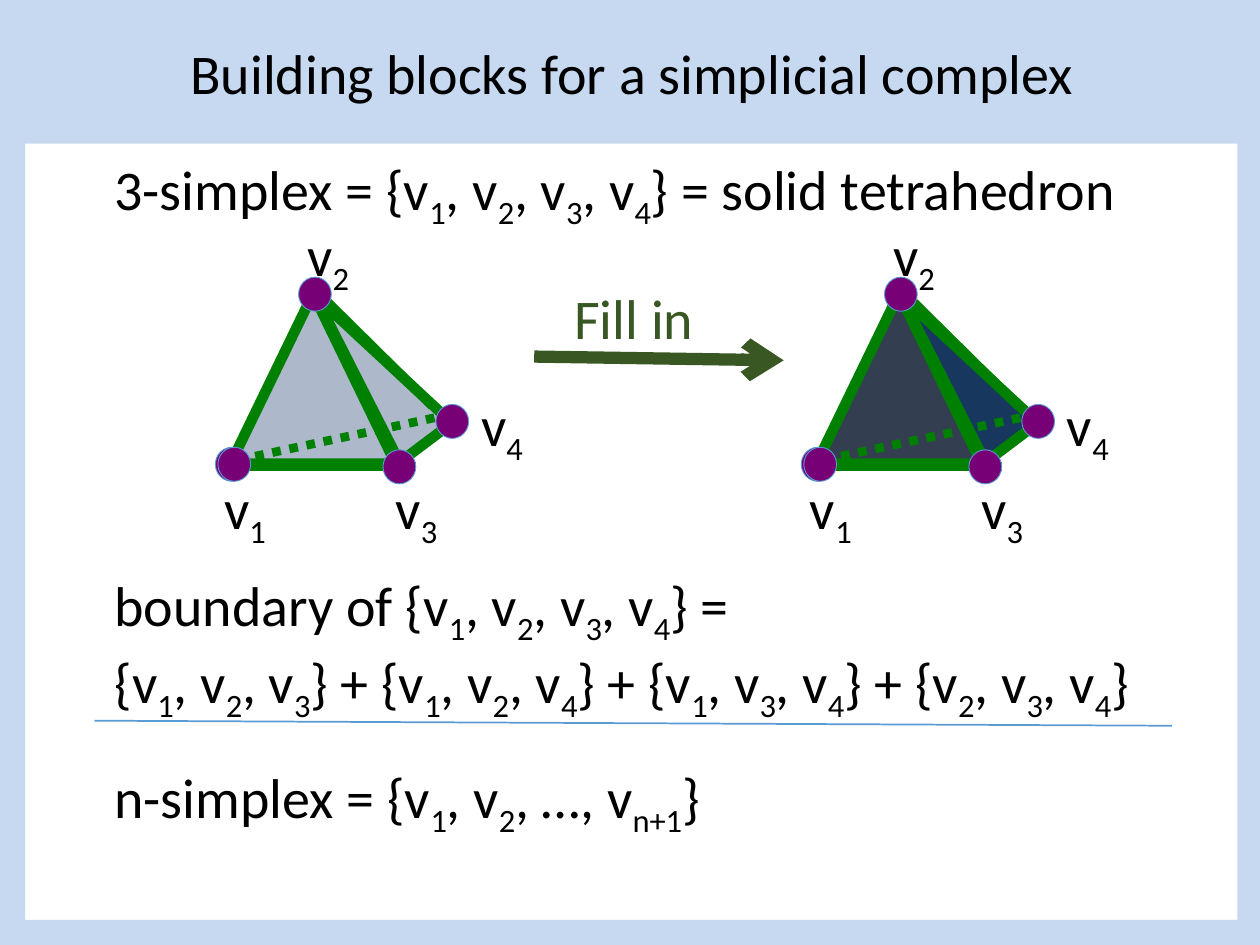
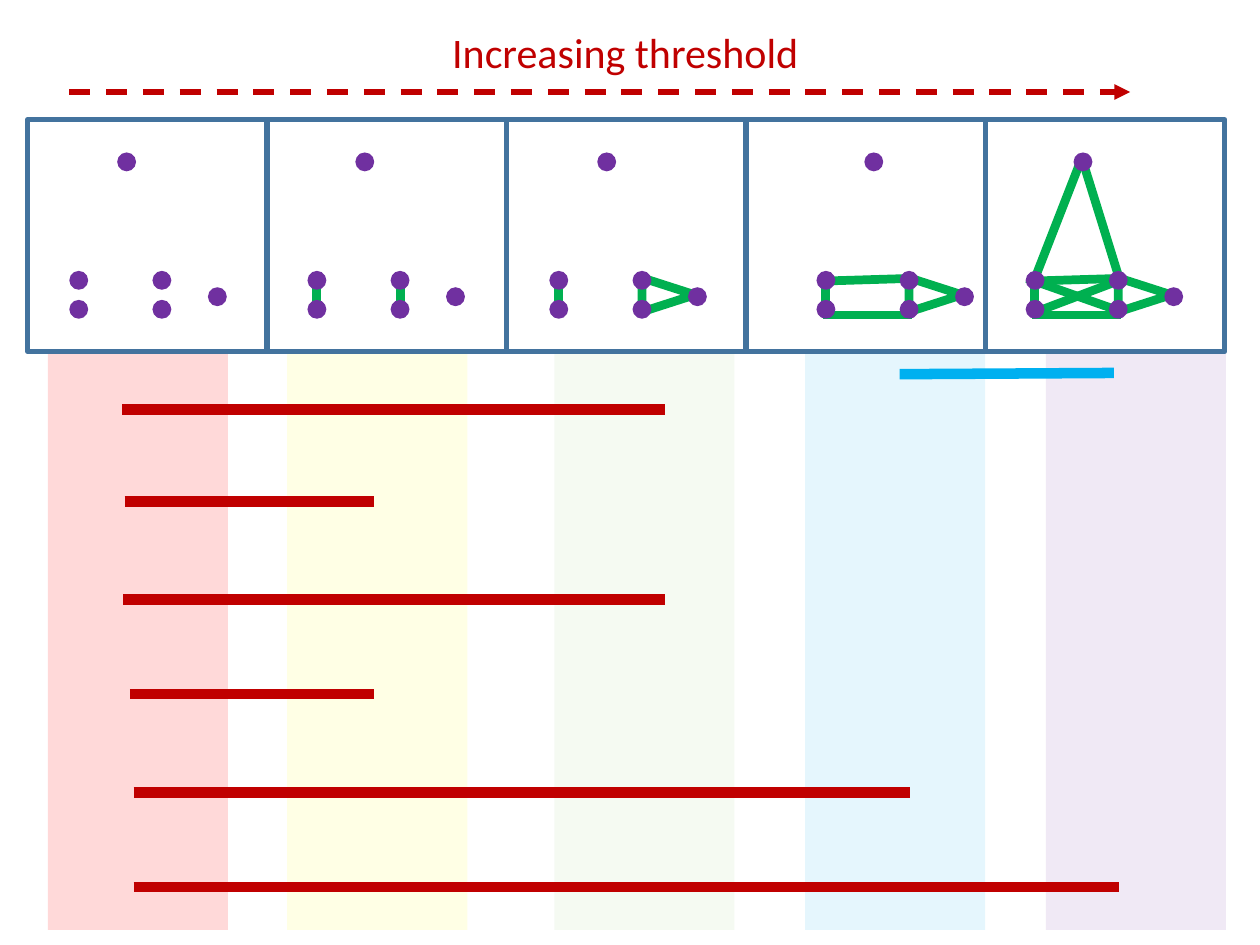
from dataclasses import dataclass
from pptx import Presentation
from pptx.dml.color import RGBColor
from pptx.enum.dml import MSO_LINE as DASH
from pptx.enum.shapes import MSO_CONNECTOR, MSO_SHAPE as SHAPE
from pptx.enum.text import MSO_ANCHOR, MSO_AUTO_SIZE, PP_ALIGN
from pptx.oxml.ns import qn
from pptx.util import Inches, Pt
from lxml import etree


@dataclass(frozen=True)
class Theme:
    """Colours and type sizes of the deck."""
    font: str = "Calibri"
    big: int = 32
    small: int = 24
    ink: str = "000000"
    white: str = "FFFFFF"
    band: str = "C6D9F1"
    edge: str = "008000"
    vertex: str = "770077"
    thin: str = "5B9BD5"
    hollow: tuple = ("ADB9CA", "ADB9CA")
    solid: tuple = ("333F50", "17375E")
    fill_in: str = "385723"
    red: str = "C00000"
    blue: str = "00B0F0"
    green: str = "00B050"
    purple: str = "7030A0"
    frame: str = "43739E"


T = Theme()

BANDS = [(0.38, "FF0000", 15), (2.28, "FFFF00", 10), (4.4, "E2F0D9", 32),
         (6.39, T.blue, 10), (8.3, T.purple, 10)]
BARS = [(0.97, 5.28, 3.25), (0.99, 2.97, 3.98), (0.98, 5.28, 4.76),
        (1.03, 2.97, 5.51), (1.06, 7.22, 6.29), (1.06, 8.88, 7.04)]
DOTS = [(0.38, 1.21), (0.66, 2.15), (0.66, 2.38), (0, 2.15), (0, 2.38), (1.1, 2.28)]

LEFT = (0.07, 2.23, 0.07, 2.47)
RIGHT = (0.74, 2.21, 0.74, 2.43)
TOP = (0.74, 2.21, 0.08, 2.23)
BOTTOM = (0.05, 2.5, 0.76, 2.5)
DIAGONALS = [(0.07, 2.48, 0.68, 2.25), (0.01, 2.21, 0.75, 2.47)]
PEAK = [(0.44, 1.27, 0.05, 2.27), (0.46, 1.3, 0.74, 2.2)]
STAGES = [(0.55, [], False),
          (2.44, [LEFT, RIGHT], False),
          (4.36, [LEFT], True),
          (6.48, [LEFT, TOP, BOTTOM], True),
          (8.14, [LEFT, TOP, BOTTOM, *DIAGONALS, *PEAK], True)]


def rgb(code):
    """Turn a hex code into a colour."""
    return RGBColor.from_string(code)


def add_runs(p, text, size, color):
    """Add runs to a paragraph; parts between underscores are subscripts."""
    for i, part in enumerate(text.split("_")):
        if not part:
            continue
        r = p.add_run()
        r.text = part
        r.font.name, r.font.size = T.font, Pt(size)
        r.font.color.rgb = rgb(color)
        if i % 2:
            r._r.get_or_add_rPr().set("baseline", "-25000")


def add_text(shapes, box, lines, size=T.big, color=T.ink):
    """Add a text box from (text, space before) lines."""
    tf = shapes.add_textbox(*map(Inches, box)).text_frame
    tf.word_wrap = True
    tf.auto_size = MSO_AUTO_SIZE.SHAPE_TO_FIT_TEXT
    for i, (text, gap) in enumerate(lines):
        p = tf.add_paragraph() if i else tf.paragraphs[0]
        p.space_before = Pt(gap)
        add_runs(p, text, size, color)


def add_shape(shapes, kind, box, fill=None, line=None, width=1, rot=0, alpha=None):
    """Add a preset shape with optional fill, outline and opacity."""
    sp = shapes.add_shape(kind, *map(Inches, box))
    sp.shadow.inherit = False
    sp.rotation = rot
    if fill:
        sp.fill.solid()
        sp.fill.fore_color.rgb = rgb(fill)
    else:
        sp.fill.background()
    if alpha:
        clr = sp._element.spPr.find(qn("a:solidFill")).find(qn("a:srgbClr"))
        etree.SubElement(clr, qn("a:alpha")).set("val", str(alpha * 1000))
    if line:
        sp.line.color.rgb = rgb(line)
        sp.line.width = Pt(width)
    else:
        sp.line.fill.background()
    return sp


def add_line(shapes, ends, color, width, dash=None, head=None):
    """Add a straight line with optional dash and arrowhead."""
    cx = shapes.add_connector(MSO_CONNECTOR.STRAIGHT, *map(Inches, ends))
    cx.line.color.rgb = rgb(color)
    cx.line.width = Pt(width)
    if dash:
        cx.line.dash_style = dash
    if head:
        etree.SubElement(cx.line._get_or_add_ln(), qn("a:tailEnd")).set("type", head)
    etree.SubElement(cx._element.spPr, qn("a:effectLst"))


def simplex(*names):
    """Write a vertex set with subscripts."""
    return "{" + ", ".join(f"v_{n}_" for n in names) + "}"


def add_vertex(shapes, x, y):
    """Add one tetrahedron vertex."""
    add_shape(shapes, SHAPE.OVAL, (x, y, 0.26, 0.27), T.vertex, T.thin, 0.5)


def add_tetrahedron(slide, x, faces):
    """Add a labelled tetrahedron whose left vertex starts at x."""
    shapes = slide.shapes.add_group_shape().shapes
    front, side = faces
    add_shape(shapes, SHAPE.ISOSCELES_TRIANGLE, (x + 0.12, 2.33, 1.31, 1.35),
              front, T.edge, 6)
    add_shape(shapes, SHAPE.ISOSCELES_TRIANGLE, (x + 0.97, 2.2, 0.52, 1.46),
              side, T.edge, 6, rot=323)
    add_line(shapes, (x + 0.83, 2.34, x + 1.72, 3.22), T.edge, 5.5)
    add_line(shapes, (x + 1.59, 3.7, x + 0.25, 3.7), T.edge, 5)
    for dx, y in [(1.33, 3.57), (0.66, 2.2), (0, 3.55)]:
        add_vertex(shapes, x + dx, y)
    add_line(shapes, (x + 0.18, 3.65, x + 1.86, 3.29), T.edge, 5, DASH.ROUND_DOT)
    for dx, y in [(0.02, 3.55), (1.75, 3.21)]:
        add_vertex(shapes, x + dx, y)
    for n, dx, y in [(4, 2.01, 3.05), (3, 1.33, 3.71), (1, -0.03, 3.71), (2, 0.63, 1.7)]:
        add_text(shapes, (x + dx, y, 0.63, 0.57), [(f"v_{n}_", 0)])


def add_title_frame(slide, title):
    """Add the border bands and the title band."""
    for box in [(0, 0, 0.2, 7.5), (9.82, 0, 0.2, 7.5),
                (0.02, 0, 10.01, 0.2), (-0.01, 7.3, 10.01, 0.2)]:
        add_shape(slide.shapes, SHAPE.RECTANGLE, box, T.band)
    sp = add_shape(slide.shapes, SHAPE.RECTANGLE, (0.02, 0, 10, 1.14), T.band)
    tf = sp.text_frame
    tf.vertical_anchor = MSO_ANCHOR.MIDDLE
    p = tf.paragraphs[0]
    p.alignment = PP_ALIGN.CENTER
    add_runs(p, title, T.big, T.ink)


def add_stage(slide, x, edges, has_triangle):
    """Add the points of one threshold stage with its edges."""
    shapes = slide.shapes.add_group_shape().shapes
    if has_triangle:
        add_shape(shapes, SHAPE.ISOSCELES_TRIANGLE, (x + 0.81, 2.13, 0.27, 0.42),
                  line=T.green, width=5, rot=90)
    for x1, y1, x2, y2 in edges:
        add_line(shapes, (x + x1, y1, x + x2, y2), T.green, 5)
    for dx, y in DOTS:
        add_shape(shapes, SHAPE.OVAL, (x + dx, y, 0.15, 0.15), T.purple)


def build_simplex_slide(slide):
    """Build the slide on the 3-simplex and its boundary."""
    faces = [(1, 2, 3), (1, 2, 4), (1, 3, 4), (2, 3, 4)]
    add_text(slide.shapes, (0.81, 1.18, 8.55, 5.76), [
        (f"3-simplex = {simplex(1, 2, 3, 4)} = solid tetrahedron", 0),
        (f"boundary of {simplex(1, 2, 3, 4)} =", 194),
        (" + ".join(simplex(*f) for f in faces), 0),
        ("n-simplex = {v_1_, v_2_, …, v_n+1_}", 22)])
    add_tetrahedron(slide, 6.36, T.solid)
    add_line(slide.shapes, (0.75, 5.72, 9.3, 5.76), T.thin, 1)
    add_title_frame(slide, "Building blocks for a simplicial complex")
    add_tetrahedron(slide, 1.71, T.hollow)
    add_line(slide.shapes, (4.24, 2.83, 6.22, 2.86), T.fill_in, 7, head="arrow")
    add_text(slide.shapes, (4.46, 2.2, 1.34, 0.64), [("Fill in", 0)], color=T.fill_in)


def build_threshold_slide(slide):
    """Build the barcode slide for an increasing threshold."""
    shapes = slide.shapes
    for x, color, alpha in BANDS:
        add_shape(shapes, SHAPE.RECTANGLE, (x, 2.46, 1.43, 4.92), color, alpha=alpha)
    add_shape(shapes, SHAPE.RECTANGLE, (0.07, 2.34, 9.93, 0.44), T.white)
    add_text(shapes, (3.49, 0.16, 4.15, 0.5), [("Increasing threshold", 0)],
             T.small, T.red)
    for i in range(len(STAGES)):
        add_shape(shapes, SHAPE.RECTANGLE, (0.22 + 1.9 * i, 0.95, 1.9, 1.84),
                  line=T.frame, width=3)
    for stage in STAGES:
        add_stage(slide, *stage)
    add_line(shapes, (0.55, 0.73, 8.97, 0.73), T.red, 3, DASH.DASH, "triangle")
    for x1, x2, y in BARS:
        add_line(shapes, (x1, y, x2, y), T.red, 6)
    add_line(shapes, (7.14, 2.97, 8.84, 2.96), T.blue, 6)


def main():
    """Build and save the deck."""
    prs = Presentation()
    prs.slide_width, prs.slide_height = Inches(10), Inches(7.5)
    for build in (build_simplex_slide, build_threshold_slide):
        build(prs.slides.add_slide(prs.slide_layouts[6]))
    prs.save("out.pptx")


if __name__ == "__main__":
    main()
